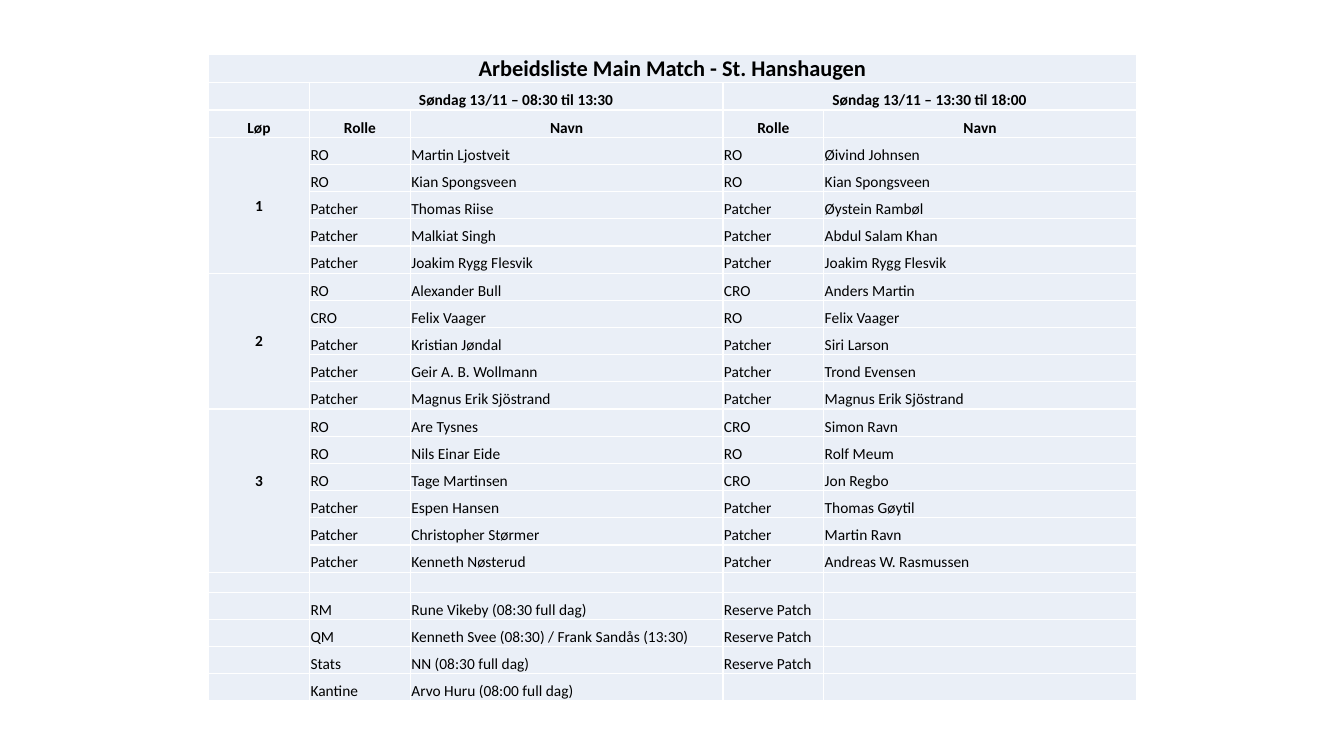
from lxml.etree import SubElement
from pptx import Presentation
from pptx.dml.color import RGBColor
from pptx.enum.text import MSO_ANCHOR as Anchor, PP_ALIGN as Align
from pptx.oxml.ns import qn
from pptx.util import Inches, Pt

CELL_BLUE = RGBColor(0xEA, 0xEF, 0xF7)
BORDER_WHITE = RGBColor(0xFF, 0xFF, 0xFF)
BLACK = RGBColor(0, 0, 0)
FONT = "Calibri"
TEXT_SIZE, TITLE_SIZE = 11, 16
ROW_HEIGHT, GAP_HEIGHT = 0.27, 0.2
COLUMN_WIDTHS = [1, 1, 3.1, 1, 3.1]

# Headings, then one block of people per course (løp)
HEADINGS = [
    ("Arbeidsliste Main Match - St. Hanshaugen", "", "", "", ""),
    ("", "Søndag 13/11 – 08:30 til 13:30", "", "Søndag 13/11 – 13:30 til 18:00", ""),
    ("Løp", "Rolle", "Navn", "Rolle", "Navn"),
]
COURSES = {
    "1": [
        ("RO", "Martin Ljostveit", "RO", "Øivind Johnsen"),
        ("RO", "Kian Spongsveen", "RO", "Kian Spongsveen"),
        ("Patcher", "Thomas Riise", "Patcher", "Øystein Rambøl"),
        ("Patcher", "Malkiat Singh", "Patcher", "Abdul Salam Khan"),
        ("Patcher", "Joakim Rygg Flesvik", "Patcher", "Joakim Rygg Flesvik"),
    ],
    "2": [
        ("RO", "Alexander Bull", "CRO", "Anders Martin"),
        ("CRO", "Felix Vaager", "RO", "Felix Vaager"),
        ("Patcher", "Kristian Jøndal", "Patcher", "Siri Larson"),
        ("Patcher", "Geir A. B. Wollmann", "Patcher", "Trond Evensen"),
        ("Patcher", "Magnus Erik Sjöstrand", "Patcher", "Magnus Erik Sjöstrand"),
    ],
    "3": [
        ("RO", "Are Tysnes", "CRO", "Simon Ravn"),
        ("RO", "Nils Einar Eide", "RO", "Rolf Meum"),
        ("RO", "Tage Martinsen", "CRO", "Jon Regbo"),
        ("Patcher", "Espen Hansen", "Patcher", "Thomas Gøytil"),
        ("Patcher", "Christopher Størmer", "Patcher", "Martin Ravn"),
        ("Patcher", "Kenneth Nøsterud", "Patcher", "Andreas W. Rasmussen"),
    ],
}
SUPPORT = [
    ("", "RM", "Rune Vikeby (08:30 full dag)", "Reserve Patch", ""),
    ("", "QM", "Kenneth Svee (08:30) / Frank Sandås (13:30)", "Reserve Patch", ""),
    ("", "Stats", "NN (08:30 full dag)", "Reserve Patch", ""),
    ("", "Kantine", "Arvo Huru (08:00 full dag)", "", ""),
]

# Table rows and merged areas (first row, first column, last row, last column)
rows = list(HEADINGS)
merges = [(0, 0, 0, 4), (1, 1, 1, 2), (1, 3, 1, 4)]
for course, people in COURSES.items():
    first = len(rows)
    for index, person in enumerate(people):
        rows.append((course if index == 0 else "", *person))
    merges.append((first, 0, len(rows) - 1, 0))
gap_row = len(rows)
rows += [("",) * 5, *SUPPORT]


def add_borders(cell):
    properties = cell._tc.get_or_add_tcPr()
    for side in ("a:lnL", "a:lnR", "a:lnT", "a:lnB"):
        line = SubElement(properties, qn(side), w=str(Pt(1)))
        fill = SubElement(line, qn("a:solidFill"))
        SubElement(fill, qn("a:srgbClr"), val=str(BORDER_WHITE))


deck = Presentation()
deck.slide_width, deck.slide_height = Inches(13.33), Inches(7.5)
page = deck.slides.add_slide(deck.slide_layouts[6])

# Table grid
table_height = ROW_HEIGHT * (len(rows) - 1) + GAP_HEIGHT
table = page.shapes.add_table(
    len(rows), len(COLUMN_WIDTHS), Inches(2.07), Inches(0.54),
    Inches(sum(COLUMN_WIDTHS)), Inches(table_height)).table
for column, width in zip(table.columns, COLUMN_WIDTHS):
    column.width = Inches(width)
for number, row in enumerate(table.rows):
    row.height = Inches(GAP_HEIGHT if number == gap_row else ROW_HEIGHT)

# Cells
for row_number, texts in enumerate(rows):
    for column_number, text in enumerate(texts):
        cell = table.cell(row_number, column_number)
        is_heading = row_number < len(HEADINGS)
        is_course = column_number == 0 and text in COURSES
        add_borders(cell)
        cell.fill.solid()
        cell.fill.fore_color.rgb = CELL_BLUE
        cell.margin_left = cell.margin_right = cell.margin_top = Inches(0.01)
        cell.margin_bottom = 0
        cell.vertical_anchor = Anchor.MIDDLE if is_course else Anchor.BOTTOM
        para = cell.text_frame.paragraphs[0]
        if not text:
            SubElement(para._p, qn("a:endParaRPr"), sz=str(TEXT_SIZE * 100))
            continue
        para.alignment = Align.CENTER if is_heading or is_course else Align.LEFT
        span = para.add_run()
        span.text = text
        span.font.name = FONT
        span.font.size = Pt(TITLE_SIZE if row_number == 0 else TEXT_SIZE)
        span.font.bold = is_heading or is_course
        span.font.color.rgb = BLACK
        if text == "3":
            cell.margin_bottom = Inches(0.19)  # sits one half line above the middle

for top, left, bottom, right in merges:
    table.cell(top, left).merge(table.cell(bottom, right))

deck.save("out.pptx")
